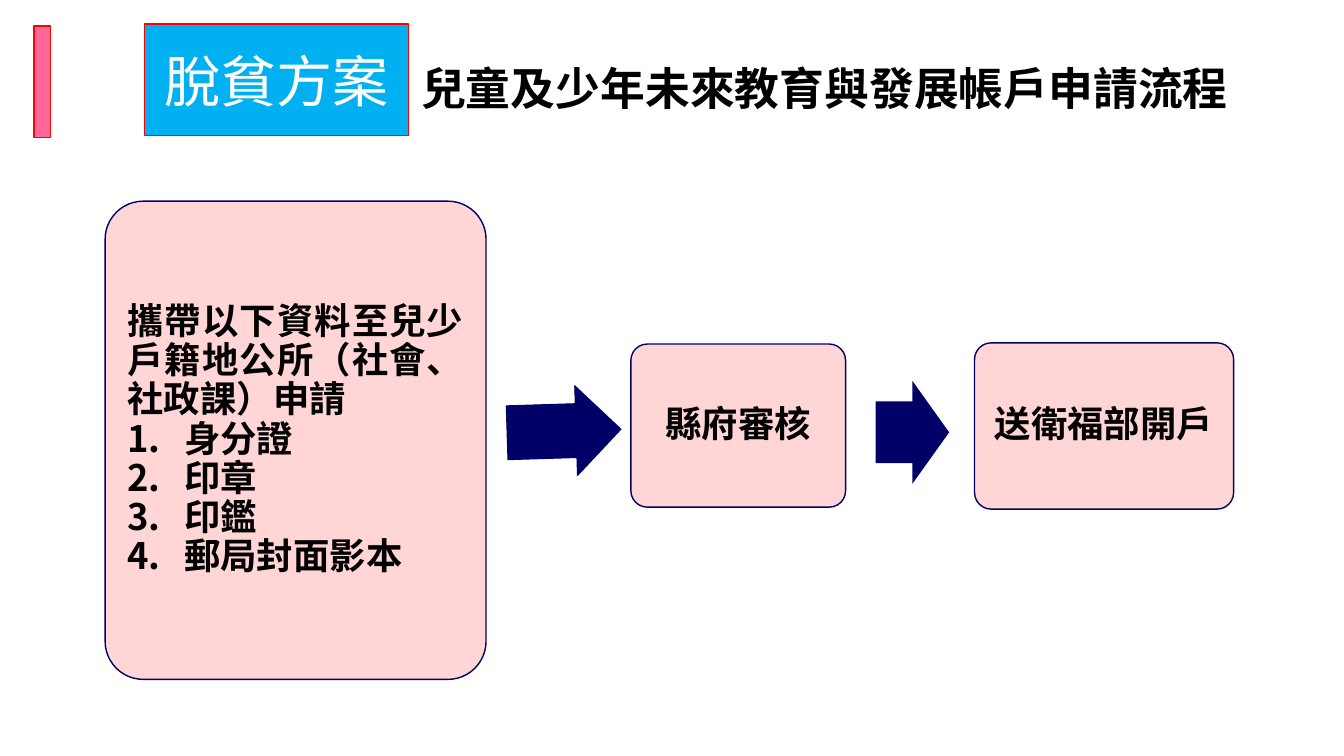
from lxml import etree
from pptx import Presentation
from pptx.dml.color import RGBColor
from pptx.enum.shapes import MSO_SHAPE
from pptx.enum.text import MSO_ANCHOR, MSO_AUTO_SIZE, PP_ALIGN
from pptx.oxml.ns import qn
from pptx.util import Cm, Pt

RECTANGLE = MSO_SHAPE.RECTANGLE
ROUNDED = MSO_SHAPE.ROUNDED_RECTANGLE
RIGHT_ARROW = MSO_SHAPE.RIGHT_ARROW
MIDDLE = MSO_ANCHOR.MIDDLE
NO_AUTOFIT = MSO_AUTO_SIZE.NONE
LEFT, CENTER, JUSTIFY = PP_ALIGN.LEFT, PP_ALIGN.CENTER, PP_ALIGN.JUSTIFY
TITLE_ONLY = 5

FONT = "Noto Sans CJK SC"
NAVY, PINK, RED = "000066", "FFD5D5", "FF0000"
BLACK, WHITE = "000000", "FFFFFF"

INSTRUCTION = "攜帶以下資料至兒少戶籍地公所（社會、社政課）申請"
DOCUMENTS = ["身分證", "印章", "印鑑", "郵局封面影本"]
# Each later step: text, then left, top, width, height in centimetres
NEXT_STEPS = [
    ("縣府審核", (15.9, 8.67, 5.41, 4.11)),
    ("送衛福部開戶", (24.56, 8.64, 6.53, 4.19)),
]


def color(hex_string):
    return RGBColor.from_string(hex_string)


class FlowSlide:
    def __init__(self, presentation):
        self.slide = presentation.slides.add_slide(presentation.slide_layouts[TITLE_ONLY])

    def shape(self, kind, box, fill, line=None, line_width=1):
        shape = self.slide.shapes.add_shape(kind, *(Cm(value) for value in box))
        shape.shadow.inherit = False
        shape.fill.solid()
        shape.fill.fore_color.rgb = color(fill)
        if line:
            shape.line.color.rgb = color(line)
            shape.line.width = Pt(line_width)
        else:
            shape.line.fill.background()
        return shape

    def prepare_frame(self, shape):
        frame = shape.text_frame
        frame.word_wrap = True
        frame.auto_size = NO_AUTOFIT
        frame.vertical_anchor = MIDDLE
        return frame

    def add_text(self, paragraph, text, size, text_color=BLACK, bold=True,
                 alignment=CENTER, line_spacing=0.9):
        paragraph.alignment = alignment
        paragraph.line_spacing = line_spacing
        run = paragraph.add_run()
        run.text = text
        run.font.size = Pt(size)
        run.font.bold = bold
        run.font.name = FONT
        run.font.color.rgb = color(text_color)
        east_asian = etree.SubElement(run.font._element, qn("a:ea"))
        east_asian.set("typeface", FONT)

    def number(self, paragraph):
        """Turn the paragraph into an item of a numbered list."""
        properties = paragraph._p.get_or_add_pPr()
        properties.set("marL", str(Cm(1.43)))
        properties.set("indent", str(-Cm(1.43)))
        numbering = etree.SubElement(properties, qn("a:buAutoNum"))
        numbering.set("type", "arabicPeriod")

    def title(self, text, box):
        title = self.slide.shapes.title
        title.left, title.top, title.width, title.height = (Cm(value) for value in box)
        frame = self.prepare_frame(title)
        self.add_text(frame.paragraphs[0], text, 32, alignment=LEFT)

    def badge(self, text, box):
        badge = self.shape(RECTANGLE, box, "00B0F0", RED)
        frame = self.prepare_frame(badge)
        self.add_text(frame.paragraphs[0], text, 40, WHITE, bold=False, line_spacing=1.0)

    def card(self, box):
        """Add a rounded step card and return its text frame."""
        card = self.shape(ROUNDED, box, PINK, NAVY)
        card.adjustments[0] = 0.1
        frame = self.prepare_frame(card)
        frame.margin_left = frame.margin_right = Cm(0.28)
        frame.margin_top = frame.margin_bottom = Cm(0.28)
        return frame

    def list_card(self, heading, items, box):
        frame = self.card(box)
        self.add_text(frame.paragraphs[0], heading, 26, alignment=JUSTIFY)
        for item in items:
            paragraph = frame.add_paragraph()
            self.add_text(paragraph, item, 26, alignment=JUSTIFY)
            self.number(paragraph)

    def step_card(self, text, box):
        paragraph = self.card(box).paragraphs[0]
        self.add_text(paragraph, text, 26)
        paragraph.space_after = Pt(9)

    def arrow(self, box, rotation=0, line=None):
        arrow = self.shape(RIGHT_ARROW, box, NAVY, line, 0.75)
        arrow.adjustments[0] = 0.6
        arrow.adjustments[1] = 0.5
        arrow.rotation = rotation


def main():
    presentation = Presentation()
    presentation.slide_width = Cm(33.87)
    presentation.slide_height = Cm(19.05)

    flow = FlowSlide(presentation)
    flow.shape(RECTANGLE, (0.86, 0.66, 0.41, 2.8), "FF6699", RED)
    flow.badge("脫貧方案", (3.65, 0.61, 6.65, 2.8))
    flow.title("兒童及少年未來教育與發展帳戶申請流程", (10.36, 0.46, 21.46, 3.68))

    flow.list_card(INSTRUCTION, DOCUMENTS, (2.65, 5.07, 9.6, 12.05))
    flow.arrow((12.78, 9.73, 2.87, 2.26), rotation=358.2, line=NAVY)
    flow.arrow((22.07, 9.6, 1.85, 2.59))
    for text, box in NEXT_STEPS:
        flow.step_card(text, box)

    presentation.save("out.pptx")


if __name__ == "__main__":
    main()
